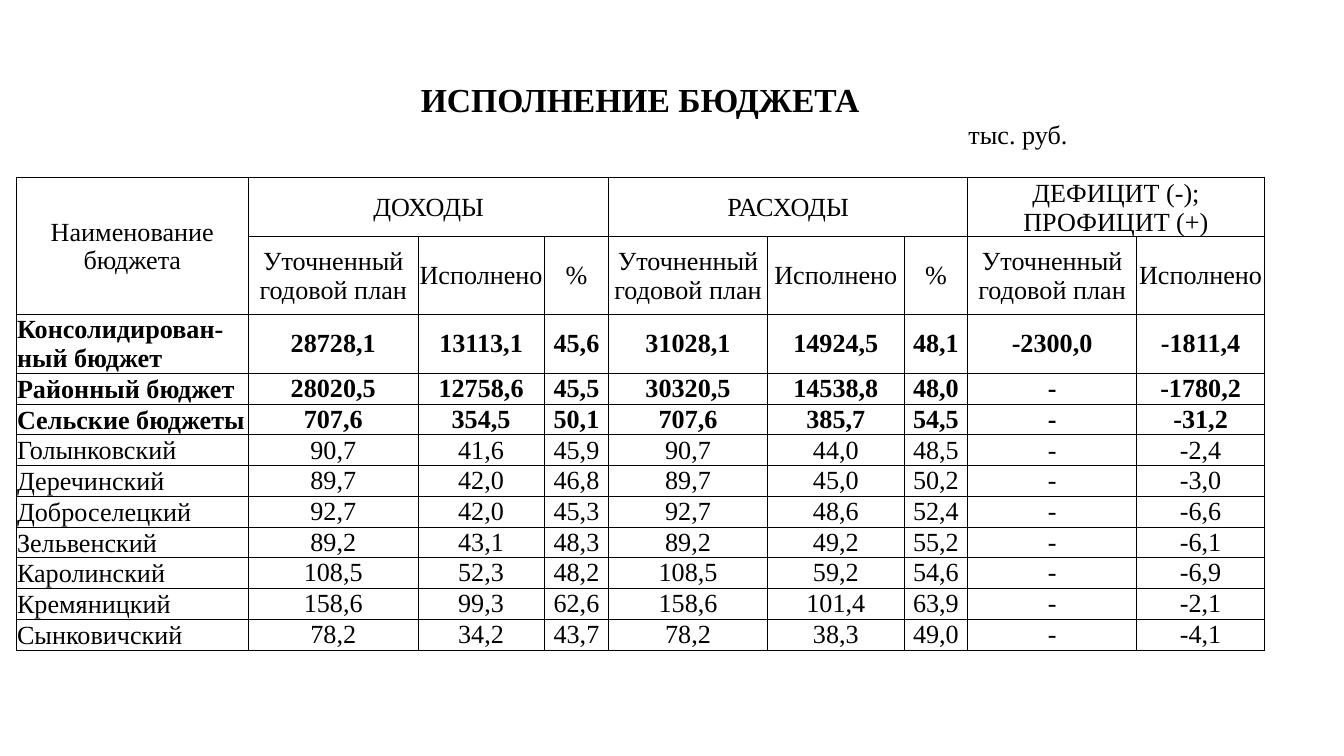
from dataclasses import dataclass
from itertools import accumulate

from lxml.etree import SubElement
from pptx import Presentation
from pptx.dml.color import RGBColor
from pptx.enum.text import MSO_ANCHOR, PP_ALIGN
from pptx.oxml.ns import qn
from pptx.util import Inches, Pt


@dataclass
class Theme:
    font: str = "Times New Roman"
    ink: str = "000000"
    title: int = 18
    body: int = 14
    rule: float = 0.5
    inset: float = 0.5


theme = Theme()


def write(cell, text, size=theme.body, bold=False, align=PP_ALIGN.CENTER,
          anchor=MSO_ANCHOR.MIDDLE, bottom=0):
    cell.margin_left = cell.margin_right = cell.margin_top = Pt(theme.inset)
    cell.margin_bottom = Pt(bottom)
    cell.vertical_anchor = anchor
    cell.text_frame.text = text
    for paragraph in cell.text_frame.paragraphs:
        paragraph.alignment = align
        paragraph.font.size = Pt(size)
        for run in paragraph.runs:
            run.font.name = theme.font
            run.font.size = Pt(size)
            run.font.bold = bold
            run.font.color.rgb = RGBColor.from_string(theme.ink)


def rule_cell(cell, sides):
    properties = cell._tc.get_or_add_tcPr()
    for position, side in enumerate(sides):
        line = SubElement(properties, qn(f"a:ln{side}"), w=str(Pt(theme.rule)))
        ink = SubElement(SubElement(line, qn("a:solidFill")), qn("a:srgbClr"))
        ink.set("val", theme.ink)
        properties.insert(position, line)


column_widths = [1.73, 1.01, 0.25, 0.65, 0.29, 0.48, 1.18,
                 0.21, 0.81, 0.09, 0.38, 1.26, 0.52, 0.43]
row_heights = [0.25, 0.43, 0.42, 0.58] + [0.21] * 10
field_spans = [1, 2, 2, 1, 1, 2, 2, 1, 2]
field_starts = [0, *accumulate(field_spans)][:-1]
group_headings = [(1, 5, "ДОХОДЫ"), (6, 10, "РАСХОДЫ"),
                  (11, 13, "ДЕФИЦИТ (-); ПРОФИЦИТ (+)")]
plan, done = "Уточненный годовой план", "Исполнено"
field_headings = [plan, done, "%", plan, done, "%", plan, done]
budgets = [
    ("Консолидирован-ный бюджет", "28728,1", "13113,1", "45,6", "31028,1", "14924,5", "48,1", "-2300,0", "-1811,4"),
    ("Районный бюджет", "28020,5", "12758,6", "45,5", "30320,5", "14538,8", "48,0", "-", "-1780,2"),
    ("Сельские бюджеты", "707,6", "354,5", "50,1", "707,6", "385,7", "54,5", "-", "-31,2"),
    ("Голынковский", "90,7", "41,6", "45,9", "90,7", "44,0", "48,5", "-", "-2,4"),
    ("Деречинский", "89,7", "42,0", "46,8", "89,7", "45,0", "50,2", "-", "-3,0"),
    ("Доброселецкий", "92,7", "42,0", "45,3", "92,7", "48,6", "52,4", "-", "-6,6"),
    ("Зельвенский", "89,2", "43,1", "48,3", "89,2", "49,2", "55,2", "-", "-6,1"),
    ("Каролинский", "108,5", "52,3", "48,2", "108,5", "59,2", "54,6", "-", "-6,9"),
    ("Кремяницкий", "158,6", "99,3", "62,6", "158,6", "101,4", "63,9", "-", "-2,1"),
    ("Сынковичский", "78,2", "34,2", "43,7", "78,2", "38,3", "49,0", "-", "-4,1"),
]
summary_count = 3

deck = Presentation()
deck.slide_width = Inches(10)
deck.slide_height = Inches(10) * 9 // 16
slide = deck.slides.add_slide(deck.slide_layouts[6])
report = slide.shapes.add_table(
    len(row_heights), len(column_widths), Inches(0.12), Inches(0.61),
    Inches(sum(column_widths)), Inches(sum(row_heights))).table
report.first_row = report.horz_banding = False
for column, width in zip(report.columns, column_widths):
    column.width = Inches(width)
for row, height in zip(report.rows, row_heights):
    row.height = Inches(height)

row_sides = [(), ("B",)] + [("L", "R", "T", "B")] * (len(row_heights) - 2)
for row, sides in zip(report.rows, row_sides):
    for cell in row.cells:
        write(cell, "")
        cell.fill.background()
        rule_cell(cell, sides)

report.cell(0, 0).merge(report.cell(0, len(column_widths) - 1))
write(report.cell(0, 0), "ИСПОЛНЕНИЕ БЮДЖЕТА", size=theme.title, bold=True)
for start in (2, 4, 6, 8, 11):
    report.cell(1, start).merge(report.cell(1, start + 1))
write(report.cell(1, 11), "тыс. руб.", align=PP_ALIGN.LEFT, anchor=MSO_ANCHOR.TOP)

report.cell(2, 0).merge(report.cell(3, 0))
write(report.cell(2, 0), "Наименование\nбюджета")
for start, end, heading in group_headings:
    report.cell(2, start).merge(report.cell(2, end))
    write(report.cell(2, start), heading)

for row_index in range(3, len(row_heights)):
    for start, span in zip(field_starts, field_spans):
        if span > 1:
            report.cell(row_index, start).merge(report.cell(row_index, start + span - 1))

for start, heading in zip(field_starts[1:], field_headings):
    write(report.cell(3, start), heading)
for index, (name, *amounts) in enumerate(budgets):
    bold = index < summary_count
    write(report.cell(index + 4, 0), name, bold=bold,
          align=PP_ALIGN.LEFT, anchor=MSO_ANCHOR.BOTTOM)
    for start, amount in zip(field_starts[1:], amounts):
        write(report.cell(index + 4, start), amount, bold=bold, bottom=theme.inset)

deck.save("out.pptx")
